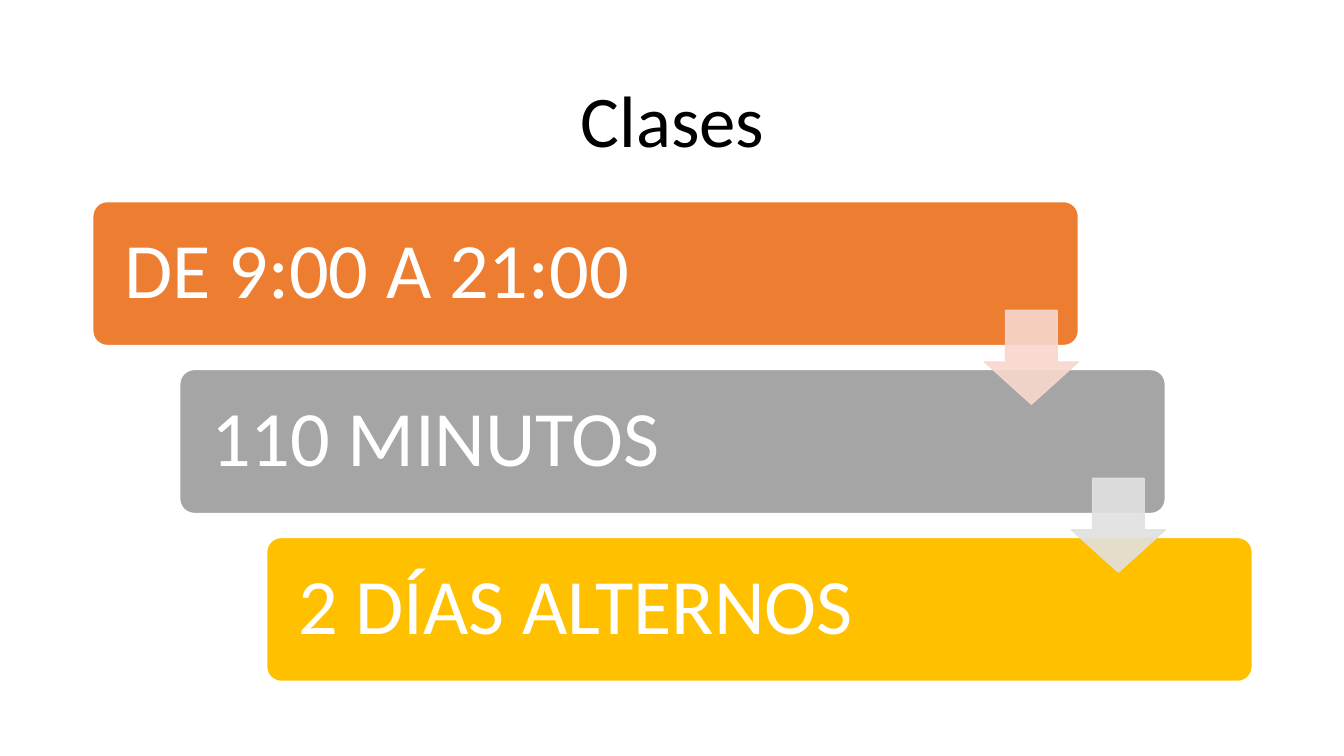
from lxml import etree
from pptx import Presentation
from pptx.dml.color import RGBColor
from pptx.enum import shapes, text
from pptx.oxml.ns import qn
from pptx.util import Inches, Pt

FONT = "Calibri"
STEPS = [
    ("DE 9:00 A 21:00", "ED7D31"),
    ("110 MINUTOS", "A5A5A5"),
    ("2 DÍAS ALTERNOS", "FFC000"),
]
ARROW_COLORS = ["F8D7CE", "E1E1E1"]


def rgb(color):
    return RGBColor.from_string(color)


def write(shape, words, size, color, align, inset):
    tf = shape.text_frame
    tf.word_wrap = True
    tf.vertical_anchor = text.MSO_ANCHOR.MIDDLE
    tf.margin_left = tf.margin_right = Inches(inset)
    p = tf.paragraphs[0]
    p.alignment = align
    p.line_spacing = 0.9
    r = p.add_run()
    r.text = words
    r.font.name = FONT
    r.font.size = Pt(size)
    r.font.color.rgb = rgb(color)


def add_block(slide, kind, box, adjustments, fill, line):
    sp = slide.shapes.add_shape(kind, *map(Inches, box))
    sp.shadow.inherit = False
    for i, value in enumerate(adjustments):
        sp.adjustments[i] = value
    sp.fill.solid()
    sp.fill.fore_color.rgb = rgb(fill)
    sp.line.color.rgb = rgb(line)
    sp.line.width = Pt(1)
    return sp


def set_opacity(shape, percent):
    """Apply the opacity to both the fill and the outline."""
    for color in shape._element.spPr.iter(qn("a:srgbClr")):
        etree.SubElement(color, qn("a:alpha"), val=str(percent * 1000))


def add_title(slide, box, words):
    tb = slide.shapes.add_textbox(*map(Inches, box))
    write(tb, words, 52, "000000", text.PP_ALIGN.CENTER, 0.1)


def add_staircase(slide, box):
    """Fill the box with descending bars, then lay an arrow over each step."""
    left, top, width, height = box
    bar_w, bar_h, arrow = 0.85 * width, 0.3 * height, 0.93
    last = len(STEPS) - 1
    dx, dy = (width - bar_w) / last, (height - bar_h) / last

    for i, (words, color) in enumerate(STEPS):
        bar = add_block(slide, shapes.MSO_SHAPE.ROUNDED_RECTANGLE,
                        (left + i * dx, top + i * dy, bar_w, bar_h),
                        [0.1], color, "FFFFFF")
        write(bar, words, 56, "FFFFFF", text.PP_ALIGN.LEFT, 0.27)

    for i, color in enumerate(ARROW_COLORS):
        sp = add_block(slide, shapes.MSO_SHAPE.DOWN_ARROW,
                       (left + i * dx + bar_w - arrow,
                        top + i * dy + 1.08, arrow, arrow),
                       [0.55, 0.45], color, color)
        set_opacity(sp, 90)


def main():
    prs = Presentation()
    prs.slide_width, prs.slide_height = Inches(13.33), Inches(7.5)
    slide = prs.slides.add_slide(prs.slide_layouts[6])
    add_title(slide, (0.92, 0.61, 11.5, 1.24), "Clases")
    add_staircase(slide, (0.92, 2, 11.5, 4.76))
    prs.save("out.pptx")


if __name__ == "__main__":
    main()
